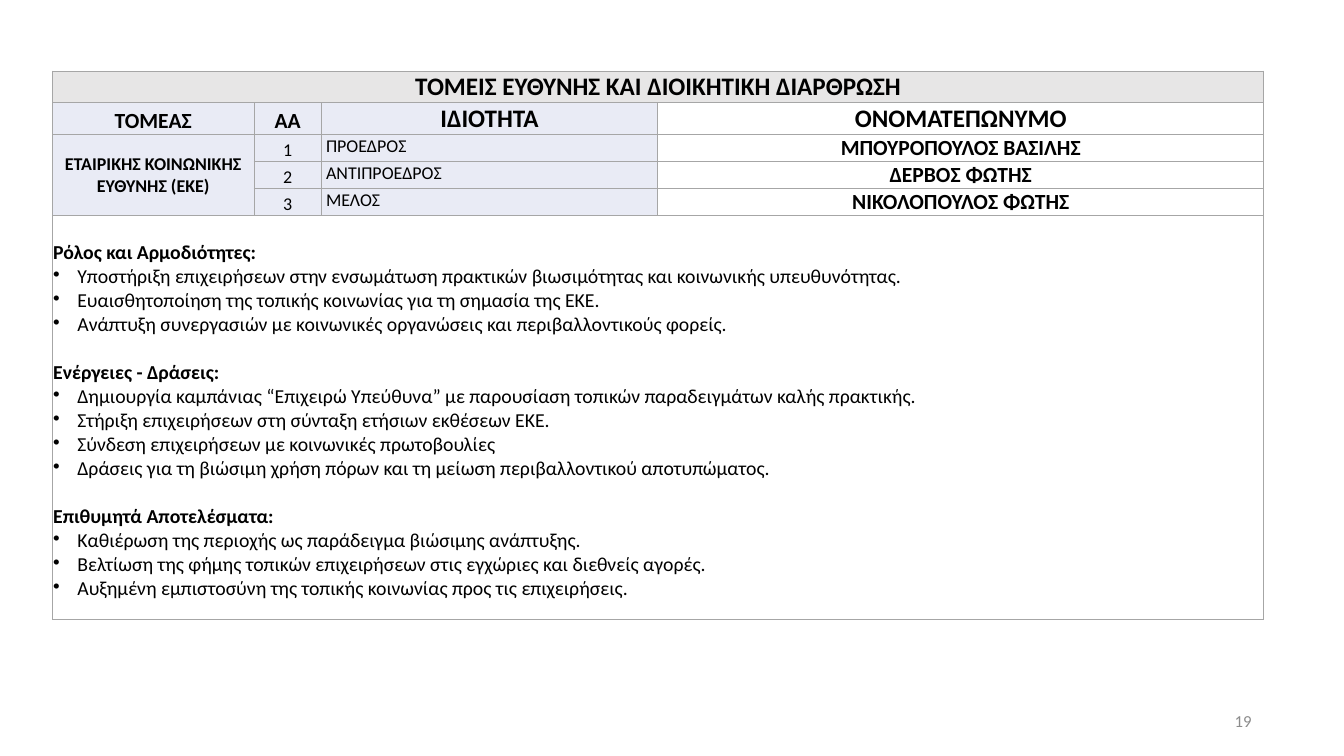
"""Builds the slide on areas of responsibility and administrative structure."""
import pptx
import pptx.dml.color
import pptx.enum.text
import pptx.oxml
import pptx.oxml.ns
import pptx.util
from pptx.util import Cm

COLOURS = {"text": "000000", "header": "E7E6E6", "tint": "E9EBF5",
           "plain": "FFFFFF", "border": "A6A6A6", "number": "8C8C8C"}
ALIGN = pptx.enum.text.PP_ALIGN
ANCHOR = pptx.enum.text.MSO_ANCHOR


def style(para, size, bold=False, align=ALIGN.LEFT, colour="text"):
    para.alignment = align
    para.font.name = "Calibri"
    para.font.size = pptx.util.Pt(size)
    para.font.bold = bold
    para.font.color.rgb = pptx.dml.color.RGBColor.from_string(COLOURS[colour])


def dress(cell, fill):
    cell.fill.solid()
    cell.fill.fore_color.rgb = pptx.dml.color.RGBColor.from_string(COLOURS[fill])
    cell.margin_left = cell.margin_right = cell.margin_top = Cm(0.03)
    cell.margin_bottom = 0
    cell.vertical_anchor = ANCHOR.BOTTOM
    properties = cell._tc.get_or_add_tcPr()
    for position, side in enumerate(("lnL", "lnR", "lnT", "lnB")):
        properties.insert(position, pptx.oxml.parse_xml(
            f'<a:{side} {pptx.oxml.ns.nsdecls("a")} w="12700"><a:solidFill>'
            f'<a:srgbClr val="{COLOURS["border"]}"/></a:solidFill></a:{side}>'))


deck = pptx.Presentation()
deck.slide_width, deck.slide_height = Cm(52.81), Cm(29.69)
page = deck.slides.add_slide(deck.slide_layouts[6])

column_widths = [7.92, 2.64, 13.23, 23.8]
row_heights = [1.22, 1.22, 1.05, 1.05, 1.05, 15.88]
table = page.shapes.add_table(
    len(row_heights), len(column_widths), Cm(2.06), Cm(2.79),
    Cm(sum(column_widths)), Cm(sum(row_heights))).table
table.first_row = table.horz_banding = False
for column, width in zip(table.columns, column_widths):
    column.width = Cm(width)
for row, height in zip(table.rows, row_heights):
    row.height = Cm(height)

row_fills = [["header"] * 4] + [["tint"] * 3 + ["plain"]] * 4 + [["plain"] * 4]
for row, fills in zip(table.rows, row_fills):
    for cell, fill in zip(row.cells, fills):
        dress(cell, fill)
for first, last in (((0, 0), (0, 3)), ((2, 0), (4, 0)), ((5, 0), (5, 3))):
    table.cell(*first).merge(table.cell(*last))

entries = [
    (0, 0, "ΤΟΜΕΙΣ ΕΥΘΥΝΗΣ ΚΑΙ ΔΙΟΙΚΗΤΙΚΉ ΔΙΑΡΘΡΩΣΗ", 28, True),
    (1, 0, "ΤΟΜΕΑΣ", 24, True),
    (1, 1, "ΑΑ", 24, True),
    (1, 2, "ΙΔΙΟΤΗΤΑ", 28, True),
    (1, 3, "ΟΝΟΜΑΤΕΠΩΝΥΜΟ", 28, True),
    (2, 0, "ΕΤΑΙΡΙΚΗΣ ΚΟΙΝΩΝΙΚΗΣ ΕΥΘΥΝΗΣ (ΕΚΕ)", 20, True),
]
members = [("ΠΡΟΕΔΡΟΣ", "ΜΠΟΥΡΟΠΟΥΛΟΣ ΒΑΣΙΛΗΣ"),
           ("ΑΝΤΙΠΡΟΕΔΡΟΣ", "ΔΕΡΒΟΣ ΦΩΤΗΣ"),
           ("ΜΕΛΟΣ", "ΝΙΚΟΛΟΠΟΥΛΟΣ ΦΩΤΗΣ")]
for number, (role, name) in enumerate(members, 1):
    entries += [(number + 1, 1, str(number), 20, False),
                (number + 1, 2, role, 20, False),
                (number + 1, 3, name, 24, True)]
for row, column, text, size, bold in entries:
    cell = table.cell(row, column)
    cell.text = text
    style(cell.text_frame.paragraphs[0], size, bold, ALIGN.CENTER)

for row in (0, 2):
    table.cell(row, 0).vertical_anchor = ANCHOR.MIDDLE
for row in (2, 3, 4):
    role_cell = table.cell(row, 2)
    role_cell.vertical_anchor = ANCHOR.TOP
    role_cell.margin_left = role_cell.margin_right = Cm(0.19)
    role_cell.margin_top = 0
    role_cell.text_frame.paragraphs[0].alignment = ALIGN.LEFT
    role_cell.text_frame.paragraphs[0].line_spacing = 1.07

sections = {
    "Ρόλος και Αρμοδιότητες:": [
        "Υποστήριξη επιχειρήσεων στην ενσωμάτωση πρακτικών βιωσιμότητας και κοινωνικής υπευθυνότητας.",
        "Ευαισθητοποίηση της τοπικής κοινωνίας για τη σημασία της ΕΚΕ.",
        "Ανάπτυξη συνεργασιών με κοινωνικές οργανώσεις και περιβαλλοντικούς φορείς."],
    "Ενέργειες - Δράσεις:": [
        "Δημιουργία καμπάνιας “Επιχειρώ Υπεύθυνα” με παρουσίαση τοπικών παραδειγμάτων καλής πρακτικής.",
        "Στήριξη επιχειρήσεων στη σύνταξη ετήσιων εκθέσεων ΕΚΕ.",
        "Σύνδεση επιχειρήσεων με κοινωνικές πρωτοβουλίες",
        "Δράσεις για τη βιώσιμη χρήση πόρων και τη μείωση περιβαλλοντικού αποτυπώματος."],
    "Επιθυμητά Αποτελέσματα:": [
        "Καθιέρωση της περιοχής ως παράδειγμα βιώσιμης ανάπτυξης.",
        "Βελτίωση της φήμης τοπικών επιχειρήσεων στις εγχώριες και διεθνείς αγορές.",
        "Αυξημένη εμπιστοσύνη της τοπικής κοινωνίας προς τις επιχειρήσεις."],
}
details = table.cell(5, 0)
details.margin_bottom = Cm(0.74)
para = details.text_frame.paragraphs[0]
for heading, points in sections.items():
    if para.text:
        para = details.text_frame.add_paragraph()
    para.text = heading
    para.space_before = pptx.util.Pt(26.8)
    style(para, 22, True)
    for point in points:
        para = details.text_frame.add_paragraph()
        para.text = point
        style(para, 22)
        properties = para._p.get_or_add_pPr()
        properties.set("marL", str(Cm(0.95)))
        properties.set("indent", str(-Cm(0.95)))
        bullet = pptx.oxml.parse_xml(
            f'<a:buChar {pptx.oxml.ns.nsdecls("a")} char="•"/>')
        properties.insert_element_before(bullet, "a:tabLst", "a:defRPr", "a:extLst")

number_box = page.shapes.add_textbox(Cm(37.29), Cm(27.53), Cm(11.89), Cm(1.57))
frame = number_box.text_frame
frame.word_wrap = True
frame.vertical_anchor = ANCHOR.MIDDLE
frame.margin_left = frame.margin_right = frame.margin_top = frame.margin_bottom = 0
frame.text = "19"
style(frame.paragraphs[0], 18.7, align=ALIGN.RIGHT, colour="number")

deck.save("out.pptx")
